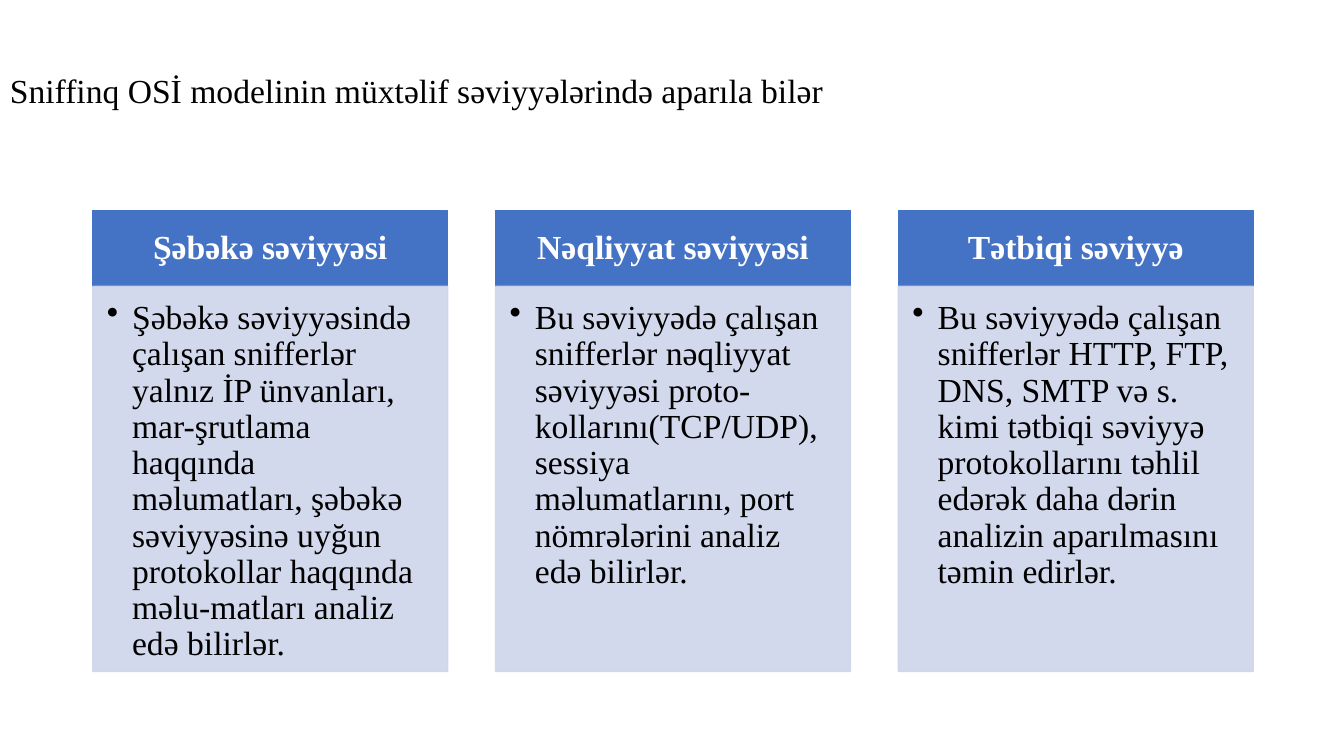
"""Build a slide on the OSI model levels at which sniffing can be done."""
import pptx
import pptx.util
import pptx.dml.color
import pptx.enum.shapes
import pptx.enum.text
import pptx.oxml.ns
from lxml import etree

Inches, Pt = pptx.util.Inches, pptx.util.Pt
RGBColor = pptx.dml.color.RGBColor
PP_ALIGN = pptx.enum.text.PP_ALIGN
MSO_ANCHOR = pptx.enum.text.MSO_ANCHOR
qn = pptx.oxml.ns.qn

TITLE = "Sniffinq OSİ modelinin müxtəlif səviyyələrində aparıla bilər"
LEVELS = [
    ("Şəbəkə səviyyəsi",
     "Şəbəkə səviyyəsində çalışan snifferlər yalnız İP ünvanları, mar-şrutlama haqqında "
     "məlumatları, şəbəkə səviyyəsinə uyğun protokollar haqqında məlu-matları analiz "
     "edə bilirlər."),
    ("Nəqliyyat səviyyəsi",
     "Bu səviyyədə çalışan snifferlər nəqliyyat səviyyəsi proto-kollarını(TCP/UDP), "
     "sessiya məlumatlarını, port nömrələrini analiz edə bilirlər."),
    ("Tətbiqi səviyyə",
     "Bu səviyyədə çalışan snifferlər HTTP, FTP, DNS, SMTP və s. kimi tətbiqi səviyyə "
     "protokollarını təhlil edərək daha dərin analizin aparılmasını təmin edirlər."),
]

FONT = "Times New Roman"
BLACK = RGBColor(0x00, 0x00, 0x00)
WHITE = RGBColor(0xFF, 0xFF, 0xFF)
BLUE = RGBColor(0x44, 0x72, 0xC4)
PALE_BLUE = RGBColor(0xCF, 0xD5, 0xEA)

LEFT, WIDTH, PITCH = 0.92, 3.52, 3.995
HEADING_TOP, HEADING_HEIGHT = 2.09, 0.75
DETAIL_TOP, DETAIL_HEIGHT = HEADING_TOP + HEADING_HEIGHT, 3.82


def write(frame, text, color, align, anchor, insets, bold=False):
    frame.word_wrap = True
    frame.vertical_anchor = anchor
    (frame.margin_left, frame.margin_top,
     frame.margin_right, frame.margin_bottom) = map(Inches, insets)
    paragraph = frame.paragraphs[0]
    paragraph.text = text
    paragraph.alignment = align
    paragraph.line_spacing = 0.9
    font = paragraph.font
    font.name, font.size, font.bold = FONT, Pt(24), bold
    font.color.rgb = color
    return paragraph


def add_block(slide, left, top, height, color, opacity=100):
    block = slide.shapes.add_shape(
        pptx.enum.shapes.MSO_SHAPE.RECTANGLE,
        Inches(left), Inches(top), Inches(WIDTH), Inches(height))
    block.shadow.inherit = False
    block.fill.solid()
    block.fill.fore_color.rgb = color
    block.line.color.rgb = color
    block.line.width = Pt(1)
    if opacity < 100:
        for tint in block.element.spPr.iter(qn("a:srgbClr")):
            etree.SubElement(tint, qn("a:alpha"), val=str(opacity * 1000))
    return block


def add_bullet(paragraph):
    properties = paragraph._p.get_or_add_pPr()
    properties.set("marL", str(Inches(0.25)))
    properties.set("indent", str(-Inches(0.25)))
    bullet = etree.Element(qn("a:buChar"), char="•")
    properties.find(qn("a:defRPr")).addprevious(bullet)


def main():
    deck = pptx.Presentation()
    deck.slide_width, deck.slide_height = Inches(13.33), Inches(7.5)
    slide = deck.slides.add_slide(deck.slide_layouts[6])

    title = slide.shapes.add_textbox(Inches(0), Inches(0.19), Inches(11.5), Inches(1.45))
    write(title.text_frame, TITLE, BLACK, PP_ALIGN.LEFT, MSO_ANCHOR.MIDDLE,
          (0.1, 0.05, 0.1, 0.05))

    for column, (level, description) in enumerate(LEVELS):
        left = LEFT + column * PITCH
        heading = add_block(slide, left, HEADING_TOP, HEADING_HEIGHT, BLUE)
        write(heading.text_frame, level, WHITE, PP_ALIGN.CENTER, MSO_ANCHOR.MIDDLE,
              (0.19, 0.11, 0.19, 0.11), bold=True)
        detail = add_block(slide, left, DETAIL_TOP, DETAIL_HEIGHT, PALE_BLUE, opacity=90)
        add_bullet(write(detail.text_frame, description, BLACK, PP_ALIGN.LEFT,
                         MSO_ANCHOR.TOP, (0.14, 0.14, 0.19, 0.21)))

    deck.save("out.pptx")


if __name__ == "__main__":
    main()
